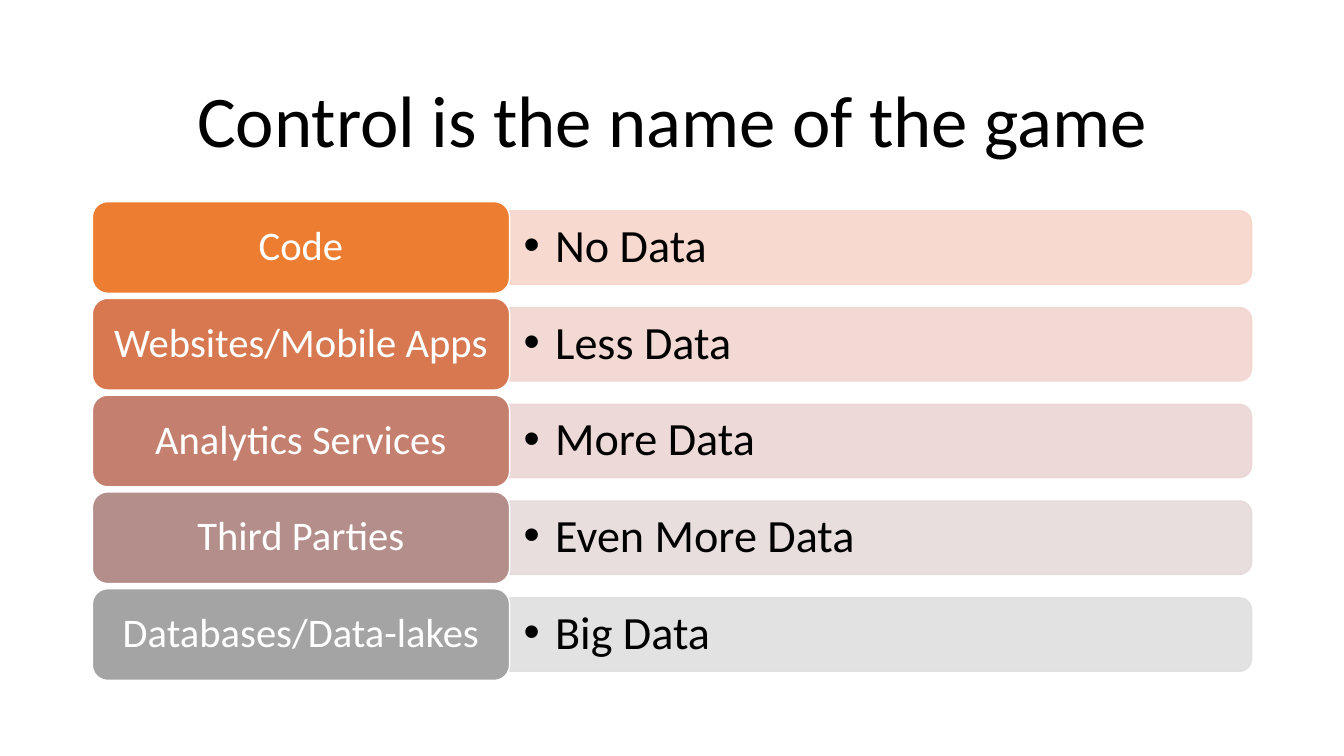
from dataclasses import dataclass

import pptx
import pptx.dml.color
import pptx.enum.shapes
import pptx.enum.text
import pptx.oxml
import pptx.oxml.ns
import pptx.util

Pt = pptx.util.Pt
RGBColor = pptx.dml.color.RGBColor
SHAPES = pptx.enum.shapes.MSO_SHAPE
ALIGN = pptx.enum.text.PP_ALIGN


@dataclass(frozen=True)
class Theme:
    font: str = "Calibri"
    title_size: float = 52
    label_size: float = 29
    detail_size: float = 33
    dark: str = "000000"
    light: str = "FFFFFF"
    bar_opacity: int = 89
    corner: float = 0.167


THEME = Theme()

# Label, detail, label colour, bar colour
LEVELS = [
    ("Code", "No Data", "ED7D31", "F7D5CB"),
    ("Websites/Mobile Apps", "Less Data", "D77850", "F1D5CF"),
    ("Analytics Services", "More Data", "C47F6E", "EBD6D4"),
    ("Third Parties", "Even More Data", "B38E8A", "E5DAD9"),
    ("Databases/Data-lakes", "Big Data", "A4A4A4", "DFDFDF"),
]


def apply_format(target, values):
    for name, value in values.items():
        setattr(target, name, value)


def write_text(shape, text, size, color, align, margins):
    """Write one vertically centred paragraph and return it."""
    horizontal, vertical = margins
    frame = shape.text_frame
    apply_format(frame, {
        "word_wrap": True,
        "auto_size": pptx.enum.text.MSO_AUTO_SIZE.NONE,
        "vertical_anchor": pptx.enum.text.MSO_ANCHOR.MIDDLE,
        "margin_left": Pt(horizontal), "margin_right": Pt(horizontal),
        "margin_top": Pt(vertical), "margin_bottom": Pt(vertical),
    })
    paragraph = frame.paragraphs[0]
    apply_format(paragraph, {"alignment": align, "line_spacing": 0.9})
    run = paragraph.add_run()
    run.text = text
    apply_format(run.font, {"name": THEME.font, "size": Pt(size)})
    run.font.color.rgb = RGBColor.from_string(color)
    return paragraph


def add_bullet(paragraph, indent):
    properties = paragraph._p.get_or_add_pPr()
    properties.set("marL", str(Pt(indent)))
    properties.set("indent", str(-Pt(indent)))
    namespace = pptx.oxml.ns.nsdecls("a")
    for xml in (f'<a:buFont {namespace} typeface="Arial"/>',
                f'<a:buChar {namespace} char="•"/>'):
        properties.append(pptx.oxml.parse_xml(xml))


def set_opacity(shape, percent):
    for color in shape._element.spPr.iter(pptx.oxml.ns.qn("a:srgbClr")):
        color.append(pptx.oxml.parse_xml(
            f'<a:alpha {pptx.oxml.ns.nsdecls("a")} val="{percent * 1000}"/>'))


def add_block(slide, kind, box, fill, line):
    shape = slide.shapes.add_shape(kind, *map(Pt, box))
    shape.shadow.inherit = False
    shape.fill.solid()
    shape.fill.fore_color.rgb = RGBColor.from_string(fill)
    shape.line.color.rgb = RGBColor.from_string(line)
    shape.line.width = Pt(1)
    shape.adjustments[0] = THEME.corner
    return shape


def add_title(slide, box, text):
    title = slide.shapes.title
    apply_format(title, dict(zip(("left", "top", "width", "height"), map(Pt, box))))
    write_text(title, text, THEME.title_size, THEME.dark, ALIGN.CENTER, (7.2, 3.6))


def add_level(slide, box, level):
    """Draw a label with its bar to the right, inside the box."""
    left, top, width, height = box
    label, detail, label_color, bar_color = level
    label_width = 298
    bar_left, bar_width = left + label_width, width - label_width
    bar_height = height * 0.8
    bar_top = top + (height - bar_height) / 2

    # Bar: an upright shape turned a quarter, so its round end faces right
    upright = (bar_left + (bar_width - bar_height) / 2,
               top + (height - bar_width) / 2, bar_height, bar_width)
    bar = add_block(slide, SHAPES.ROUND_2_SAME_RECTANGLE, upright, bar_color, bar_color)
    bar.rotation = 90
    set_opacity(bar, THEME.bar_opacity)

    # Bulleted detail over the bar
    detail_box = slide.shapes.add_textbox(
        *map(Pt, (bar_left, bar_top, bar_width, bar_height)))
    paragraph = write_text(detail_box, detail, THEME.detail_size, THEME.dark,
                           ALIGN.LEFT, (10, 5))
    add_bullet(paragraph, 22.5)

    # Label
    label_block = add_block(slide, SHAPES.ROUNDED_RECTANGLE,
                            (left, top, label_width, height), label_color, THEME.light)
    write_text(label_block, label, THEME.label_size, THEME.light, ALIGN.CENTER, (8.5, 4.3))


def add_levels(slide, box, levels):
    left, top, width, height = box
    gap = 3.6
    row_height = (height - gap * (len(levels) - 1)) / len(levels)
    for index, level in enumerate(levels):
        row_top = top + index * (row_height + gap)
        add_level(slide, (left, row_top, width, row_height), level)


def main():
    presentation = pptx.Presentation()
    apply_format(presentation, {"slide_width": Pt(960), "slide_height": Pt(540)})
    slide = presentation.slides.add_slide(presentation.slide_layouts[5])
    add_title(slide, (66, 44, 828, 89), "Control is the name of the game")
    add_levels(slide, (66, 144, 828, 342), LEVELS)
    presentation.save("out.pptx")


if __name__ == "__main__":
    main()
